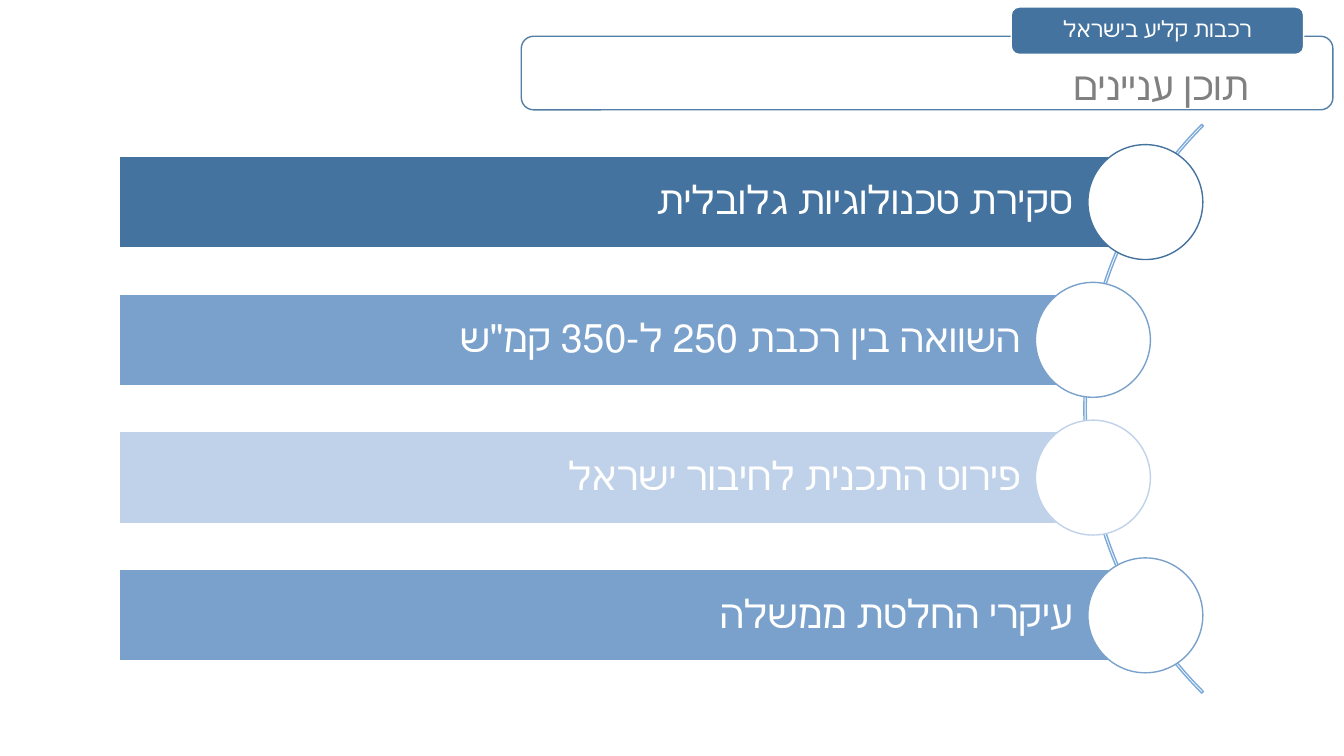
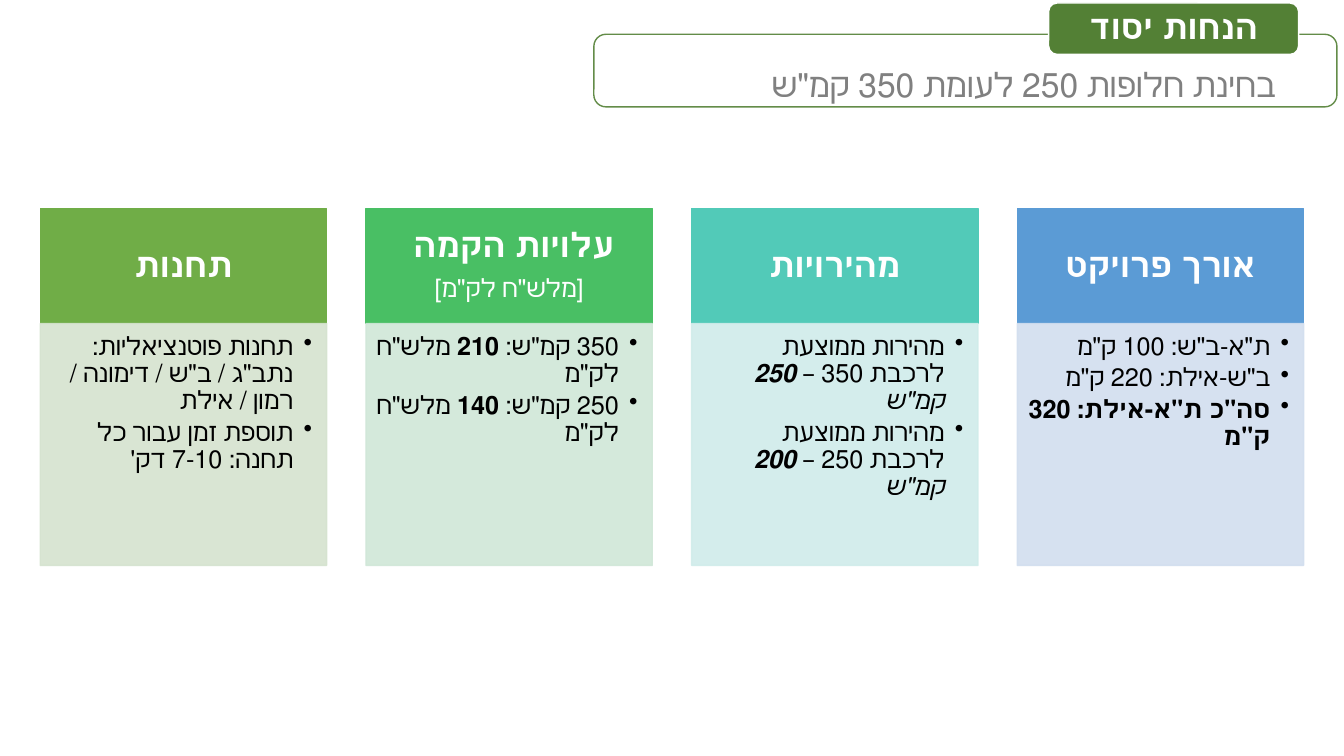
from lxml.etree import SubElement
from pptx import Presentation
from pptx.dml.color import RGBColor
from pptx.enum.lang import MSO_LANGUAGE_ID as Lang
from pptx.enum.shapes import MSO_SHAPE as Shape
from pptx.enum.text import MSO_ANCHOR as Anchor, PP_ALIGN as Align
from pptx.oxml.ns import qn
from pptx.util import Inches, Pt

FONT = "Cabin"
WHITE = RGBColor(0xFF, 0xFF, 0xFF)
BLACK = RGBColor(0, 0, 0)
GRAY = RGBColor(0x80, 0x80, 0x80)
NAVY = RGBColor(0x43, 0x73, 0x9E)
NAVY_EDGE = RGBColor(0x41, 0x71, 0x9C)
STEEL = RGBColor(0x7A, 0xA1, 0xCC)
PALE = RGBColor(0xC0, 0xD2, 0xEA)
ARC = RGBColor(0x7A, 0xA9, 0xDA)
FOREST = RGBColor(0x53, 0x80, 0x35)
BLUE = RGBColor(0x5B, 0x9B, 0xD5)
BLUE_TINT = RGBColor(0xD2, 0xDE, 0xEF)
TEAL = RGBColor(0x52, 0xCA, 0xB8)
TEAL_TINT = RGBColor(0xD0, 0xEC, 0xEA)
GREEN = RGBColor(0x49, 0xBF, 0x64)
GREEN_TINT = RGBColor(0xD0, 0xE7, 0xD8)
OLIVE = RGBColor(0x70, 0xAD, 0x47)
OLIVE_TINT = RGBColor(0xD5, 0xE3, 0xCF)


def draw(slide, kind, box, fill=None, line=WHITE, alpha=None):
    """Add a preset shape; alpha is the opacity in percent."""
    shape = slide.shapes.add_shape(kind, *map(Inches, box))
    shape.shadow.inherit = False
    if fill is None:
        shape.fill.background()
    else:
        shape.fill.solid()
        shape.fill.fore_color.rgb = fill
    shape.line.color.rgb = line
    shape.line.width = Pt(1)
    if alpha:
        for tone in shape._element.spPr.iter(qn("a:srgbClr")):
            SubElement(tone, qn("a:alpha"), val=str(alpha * 1000))
    return shape


def write(shape, paras, size=24, color=WHITE, align=Align.CENTER, anchor=Anchor.MIDDLE,
          pad=(0, 0, 0, 0), bold=False, after=0, hang=0, bullet=False):
    """Fill a shape with right-to-left paragraphs.

    A paragraph is a list of runs; a run is a text or (text, overrides).
    """
    frame = shape.text_frame
    frame.word_wrap = True
    frame.vertical_anchor = anchor
    (frame.margin_left, frame.margin_top,
     frame.margin_right, frame.margin_bottom) = map(Inches, pad)
    for num, runs in enumerate(paras):
        para = frame.paragraphs[0] if num == 0 else frame.add_paragraph()
        props = para._p.get_or_add_pPr()
        props.set("rtl", "1")
        if hang:
            props.set("marL", str(Inches(hang)))
            props.set("indent", str(-Inches(hang)))
        if bullet:
            SubElement(props, qn("a:buChar"), char="•")
        para.alignment = align
        para.line_spacing = 0.9
        para.space_after = Pt(after)
        for item in runs:
            text, style = (item, {}) if isinstance(item, str) else item
            run = para.add_run()
            run.text = text
            font = run.font
            font.name = FONT
            font.size = Pt(style.get("size", size))
            font.bold = style.get("bold", bold)
            font.italic = style.get("italic", False)
            font.color.rgb = color
            font.language_id = Lang.HEBREW


def head(slide, box, tab, label, title, fill, edge, size, label_size, pad, hang, bold=False):
    """Draw the outlined title and the label tab that overlaps its top edge."""
    frame = draw(slide, Shape.ROUNDED_RECTANGLE, box, WHITE, edge, alpha=90)
    write(frame, [[title]], size=size, color=GRAY, align=Align.RIGHT,
          anchor=Anchor.TOP, pad=pad, hang=hang)
    badge = draw(slide, Shape.ROUNDED_RECTANGLE, tab, fill)
    write(badge, [[label]], size=label_size, bold=bold, pad=(0.2, 0, 0.2, 0))


def agenda(slide, box, items):
    """Stack bars along an arc; each has a ring centred on its right end."""
    left, top, width, height = box
    ring, bar, notch, span = 1.14, 0.91, 0.52, 7.98
    step = (height - bar) / (len(items) - 1)
    mid = top + height / 2
    arc = draw(slide, Shape.BLOCK_ARC,
               (left + width - 0.61, mid - span / 2, span, span), line=ARC)
    for num, value in enumerate((81, 135, 0.003)):
        arc.adjustments[num] = value
    for num, (text, color) in enumerate(items):
        inner = 0 < num < len(items) - 1
        wide = width - notch if inner else width
        high = top + num * step
        strip = draw(slide, Shape.RECTANGLE, (left, high, wide, bar), color)
        write(strip, [[text]], size=28, align=Align.RIGHT, pad=(0.08, 0.08, 0.72, 0.08))
        draw(slide, Shape.OVAL,
             (left + wide - ring / 2, high + (bar - ring) / 2, ring, ring), WHITE, color)


def card(slide, box, title, points, color, tint):
    left, top, width, height = box
    cap = 1.14
    lid = draw(slide, Shape.RECTANGLE, (left, top, width, cap), color, color)
    write(lid, title, bold=True, after=8, pad=(0.19, 0.11, 0.19, 0.11))
    body = draw(slide, Shape.RECTANGLE, (left, top + cap, width, height - cap),
                tint, tint, alpha=90)
    write(body, points, size=18, color=BLACK, align=Align.RIGHT, anchor=Anchor.TOP,
          pad=(0.1, 0.1, 0.14, 0.16), after=3, hang=0.19, bullet=True)


def cards(slide, box, items):
    """Lay equal cards from right to left."""
    left, top, width, height = box
    wide = 2.84
    step = (width - wide) / (len(items) - 1)
    for num, item in enumerate(items):
        card(slide, (left + width - wide - num * step, top, wide, height), *item)


def speed(train, value):
    return [f"מהירות ממוצעת לרכבת {train} – ",
            (f"{value} ", {"bold": True, "italic": True}), ('קמ"ש', {"italic": True})]


def cost(train, value):
    return [f'{train} קמ"ש: ', (value, {"bold": True}), ' מלש"ח לק"מ']


TOPICS = [
    ("סקירת טכנולוגיות גלובלית", NAVY),
    ('השוואה בין רכבת 250 ל-350 קמ"ש', STEEL),
    ("פירוט התכנית לחיבור ישראל", PALE),
    ("עיקרי החלטת ממשלה", STEEL),
]

BASICS = [
    ([["אורך פרויקט"]],
     [['ת"א-ב"ש: 100 ק"מ'], ['ב"ש-אילת: 220 ק"מ'],
      [('סה"כ ת"א-אילת: 320 ק"מ', {"bold": True})]],
     BLUE, BLUE_TINT),
    ([["מהירויות"]], [speed("350", "250"), speed("250", "200")], TEAL, TEAL_TINT),
    ([["עלויות הקמה "], [('[מלש"ח לק"מ]', {"size": 18, "bold": False})]],
     [cost("350", "210"), cost("250", "140")], GREEN, GREEN_TINT),
    ([["תחנות"]],
     [['תחנות פוטנציאליות: נתב"ג / ב"ש / דימונה / רמון / אילת'],
      ["תוספת זמן עבור כל תחנה: 7-10 דק'"]],
     OLIVE, OLIVE_TINT),
]


def main():
    deck = Presentation()
    deck.slide_width, deck.slide_height = Inches(13.33), Inches(7.5)
    blank = deck.slide_layouts[6]

    slide = deck.slides.add_slide(blank)
    head(slide, (5.17, 0.36, 8.05, 0.73), (10.03, 0.07, 2.9, 0.47),
         "רכבות קליע בישראל", "תוכן עניינים", NAVY, NAVY_EDGE,
         size=28, label_size=16, pad=(0.8, 0.27, 0.8, 0.22), hang=0.31)
    agenda(slide, (1.18, 1.55, 10.18, 5.01), TOPICS)

    slide = deck.slides.add_slide(blank)
    head(slide, (5.89, 0.34, 7.37, 0.72), (10.4, 0.03, 2.48, 0.51),
         "הנחות יסוד", 'בחינת חלופות 250 לעומת 350 קמ"ש', FOREST, FOREST,
         size=24, label_size=24, pad=(0.57, 0.3, 0.57, 0.19), hang=0.25, bold=True)
    cards(slide, (0.4, 2.07, 12.53, 3.54), BASICS)

    deck.save("out.pptx")


if __name__ == "__main__":
    main()
